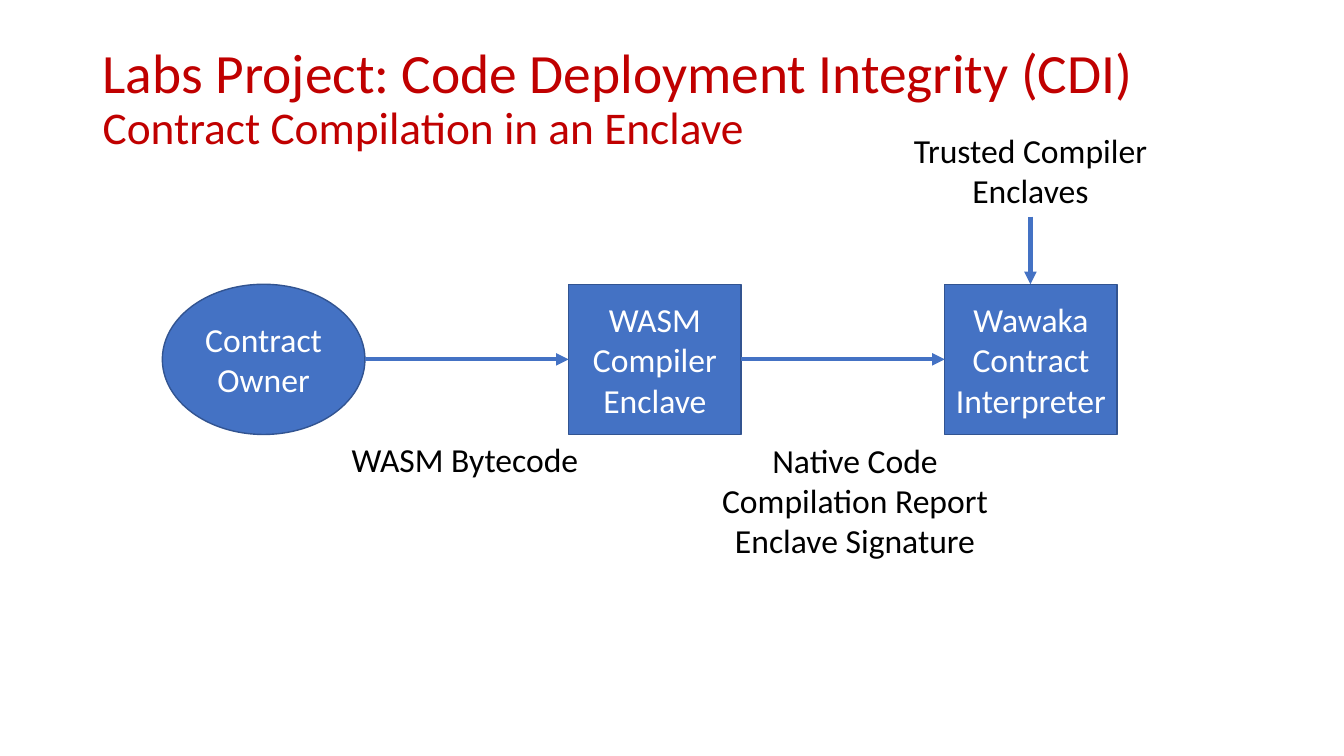
from lxml.etree import SubElement
from pptx import Presentation
from pptx.dml.color import RGBColor
from pptx.enum.shapes import MSO_CONNECTOR, MSO_SHAPE
from pptx.enum.text import MSO_ANCHOR, PP_ALIGN
from pptx.oxml.ns import qn
from pptx.util import Inches, Pt

RED, BLUE, EDGE, WHITE, BLACK = "C00000", "4472C4", "325491", "FFFFFF", "000000"


def color(hex_code):
    return RGBColor.from_string(hex_code)


def apply(target, values):
    for name, value in values.items():
        setattr(target, name, value)


class Diagram:
    font = "Calibri"
    size = 24

    def __init__(self, slide):
        self.slide = slide

    def typeset(self, frame, lines, ink, align=PP_ALIGN.CENTER, spacing=1.0):
        """Put (text, size) lines into one paragraph, parted by line breaks."""
        paragraph = frame.paragraphs[0]
        apply(paragraph, {"alignment": align, "line_spacing": spacing})
        for index, (text, size) in enumerate(lines):
            if index:
                paragraph.add_line_break()
            run = paragraph.add_run()
            run.text = text
            apply(run.font, {"name": self.font, "size": Pt(size)})
            run.font.color.rgb = color(ink)

    def label(self, box, lines, ink=BLACK, wrap=True, **style):
        frame = self.slide.shapes.add_textbox(*map(Inches, box)).text_frame
        apply(frame, {"word_wrap": wrap, "vertical_anchor": MSO_ANCHOR.TOP})
        sized = [(line, self.size) if isinstance(line, str) else line for line in lines]
        self.typeset(frame, sized, ink, **style)

    def node(self, kind, box, text):
        node = self.slide.shapes.add_shape(kind, *map(Inches, box))
        node.shadow.inherit = False
        node.fill.solid()
        node.fill.fore_color.rgb = color(BLUE)
        node.line.color.rgb = color(EDGE)
        node.line.width = Pt(1)
        apply(node.text_frame, {"word_wrap": True, "vertical_anchor": MSO_ANCHOR.MIDDLE})
        self.typeset(node.text_frame, [(text, self.size)], WHITE)

    def arrow(self, start, end):
        arrow = self.slide.shapes.add_connector(
            MSO_CONNECTOR.STRAIGHT, *map(Inches, (*start, *end)))
        arrow.line.color.rgb = color(BLUE)
        arrow.line.width = Pt(3)
        properties = arrow._element.spPr
        SubElement(properties.find(qn("a:ln")), qn("a:tailEnd"), type="triangle")
        SubElement(properties, qn("a:effectLst"))


def main():
    deck = Presentation()
    apply(deck, {"slide_width": Inches(13.33), "slide_height": Inches(7.5)})
    diagram = Diagram(deck.slides.add_slide(deck.slide_layouts[6]))

    diagram.label(
        (0.92, 0.4, 11.5, 1.01),
        [("Labs Project: Code Deployment Integrity (CDI)", 39.6),
         ("Contract Compilation in an Enclave", 32.4)],
        ink=RED, align=PP_ALIGN.LEFT, spacing=0.9)

    top, height = 2.82, 1.49
    middle = top + height / 2
    stages = [
        (MSO_SHAPE.OVAL, 1.61, 2.01, "Contract Owner"),
        (MSO_SHAPE.RECTANGLE, 5.64, 1.71, "WASM Compiler Enclave"),
        (MSO_SHAPE.RECTANGLE, 9.37, 1.71, "Wawaka Contract Interpreter"),
    ]
    for kind, left, width, text in stages:
        diagram.node(kind, (left, top, width, height), text)
    for (_, left, width, _), (_, next_left, _, _) in zip(stages, stages[1:]):
        diagram.arrow((left + width, middle), (next_left, middle))

    below = top + height
    diagram.label((3.39, below, 2.47, 0.5), ["WASM Bytecode"],
                  wrap=False, align=PP_ALIGN.LEFT)
    diagram.label((7.05, below, 2.86, 1.31),
                  ["Native Code", "Compilation Report", "Enclave Signature"], wrap=False)
    diagram.label((8.85, 1.24, 2.74, 0.91), ["Trusted Compiler Enclaves"])
    diagram.arrow((10.22, 2.15), (10.22, top))

    deck.save("out.pptx")


if __name__ == "__main__":
    main()
